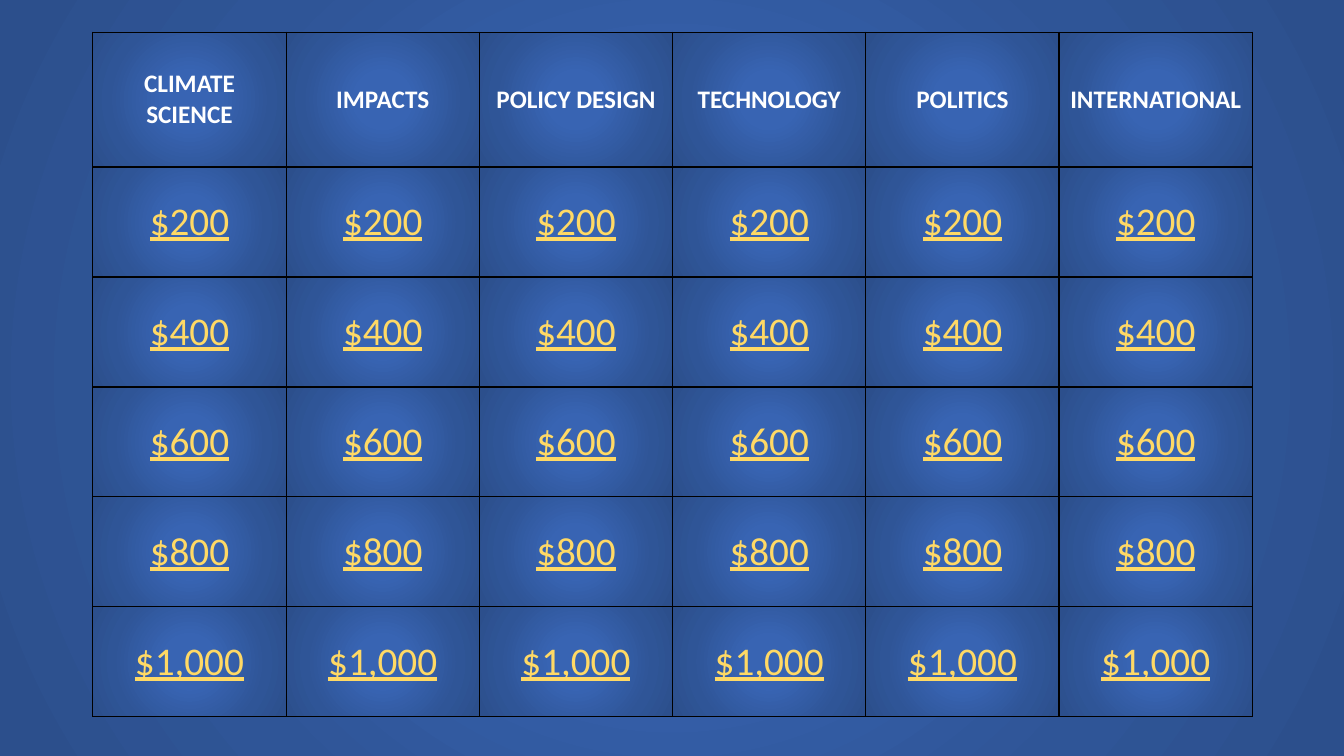
from lxml.etree import SubElement
from pptx import Presentation
from pptx.dml.color import RGBColor
from pptx.enum.text import MSO_ANCHOR, PP_ALIGN
from pptx.oxml import parse_xml
from pptx.oxml.ns import nsdecls, qn
from pptx.util import Cm, Pt

CATEGORIES = ["CLIMATE SCIENCE", "IMPACTS", "POLICY DESIGN", "TECHNOLOGY", "POLITICS", "INTERNATIONAL"]
PRIZES = ["$200", "$400", "$600", "$800", "$1,000"]
GLOW_STOPS = [(0, "3864B3"), (23, "3864B3"), (69, "2F5597"), (97, "2C4F8C")]
COLUMN_WIDTH = 4.87
HEADER_HEIGHT = 3.4
PRIZE_HEIGHT = 2.77


def color(value):
    """Return the colour for a hex string."""
    return RGBColor.from_string(value)


def add_glow(fill, owner):
    """Give the fill inside the owner element a circular gradient from its centre."""
    fill.gradient()
    gradient = next(owner.iter(qn("a:gradFill")))
    stops = "".join(
        f'<a:gs pos="{position * 1000}"><a:srgbClr val="{value}"/></a:gs>'
        for position, value in GLOW_STOPS
    )
    glow = parse_xml(
        f'<a:gradFill {nsdecls("a")} rotWithShape="1"><a:gsLst>{stops}</a:gsLst>'
        '<a:path path="circle"><a:fillToRect l="50000" t="50000" r="50000" b="50000"/></a:path>'
        "</a:gradFill>"
    )
    gradient.getparent().replace(gradient, glow)


def add_borders(properties, value, width):
    """Draw a solid line on all four sides of a table cell."""
    for index, side in enumerate(["lnL", "lnR", "lnT", "lnB"]):
        line = SubElement(properties, qn(f"a:{side}"), w=str(Pt(width)))
        SubElement(SubElement(line, qn("a:solidFill")), qn("a:srgbClr"), val=value)
        properties.insert(index, line)


def write_text(cell, text, size, value, bold=False, underline=False):
    """Write centred, formatted text into a table cell."""
    cell.vertical_anchor = MSO_ANCHOR.MIDDLE
    para = cell.text_frame.paragraphs[0]
    para.alignment = PP_ALIGN.CENTER
    span = para.add_run()
    span.text = text
    span.font.name = "Calibri"
    span.font.size = Pt(size)
    span.font.bold = bold
    span.font.underline = underline
    span.font.color.rgb = color(value)


def add_board(page):
    """Add the game board with a category row above the prize rows."""
    rows, columns = len(PRIZES) + 1, len(CATEGORIES)
    frame = page.shapes.add_table(
        rows, columns, Cm(2.34), Cm(0.81),
        Cm(COLUMN_WIDTH * columns), Cm(HEADER_HEIGHT + PRIZE_HEIGHT * len(PRIZES)),
    )
    board = frame.table
    board.first_row = False
    board.horz_banding = False
    for column in board.columns:
        column.width = Cm(COLUMN_WIDTH)
    for index, row in enumerate(board.rows):
        row.height = Cm(PRIZE_HEIGHT if index else HEADER_HEIGHT)
    for cell in board.iter_cells():
        properties = cell._tc.get_or_add_tcPr()
        add_glow(cell.fill, properties)
        add_borders(properties, "000000", 1)
    for column, category in enumerate(CATEGORIES):
        write_text(board.cell(0, column), category, 18, "FFFFFF", bold=True)
        for row, prize in enumerate(PRIZES, start=1):
            write_text(board.cell(row, column), prize, 28, "FFD965", underline=True)


def main():
    """Build the slide and save the deck."""
    deck = Presentation()
    deck.slide_width, deck.slide_height = Cm(33.87), Cm(19.05)
    page = deck.slides.add_slide(deck.slide_layouts[6])
    add_glow(page.background.fill, page._element)
    add_board(page)
    deck.save("out.pptx")


if __name__ == "__main__":
    main()
